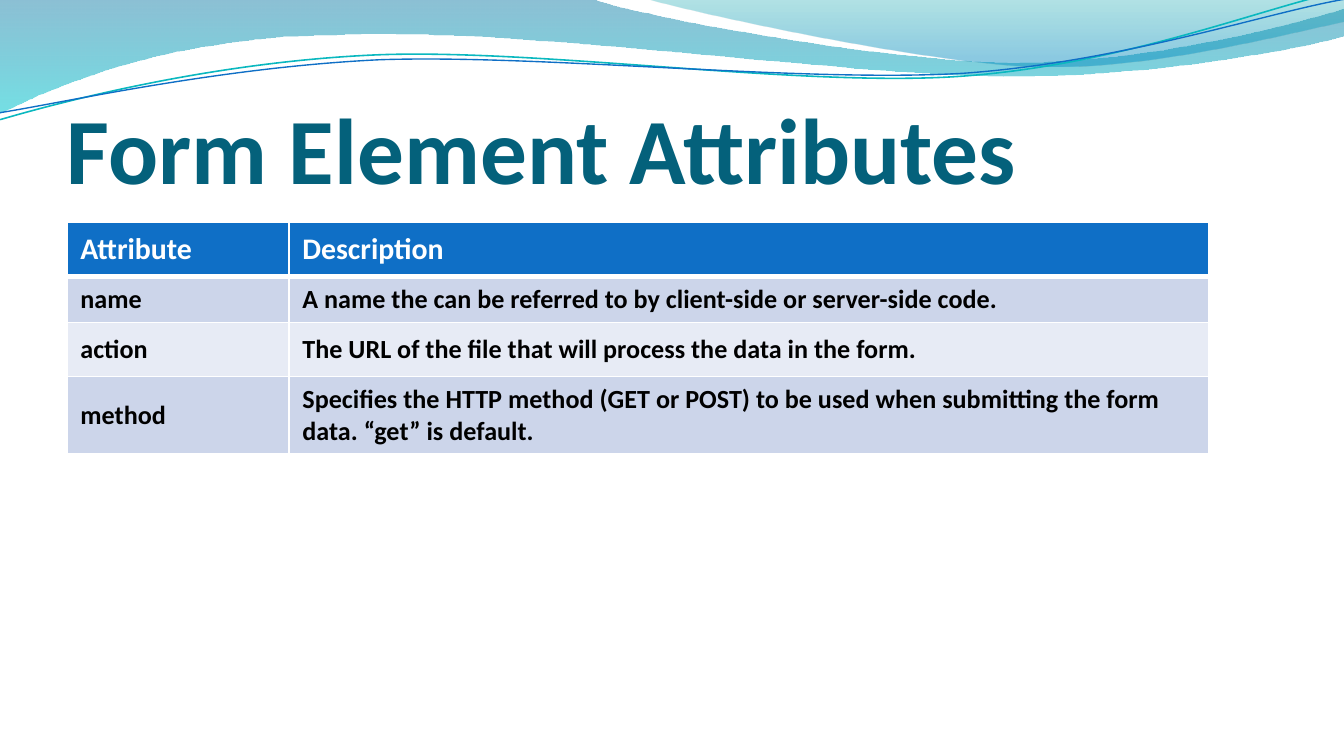
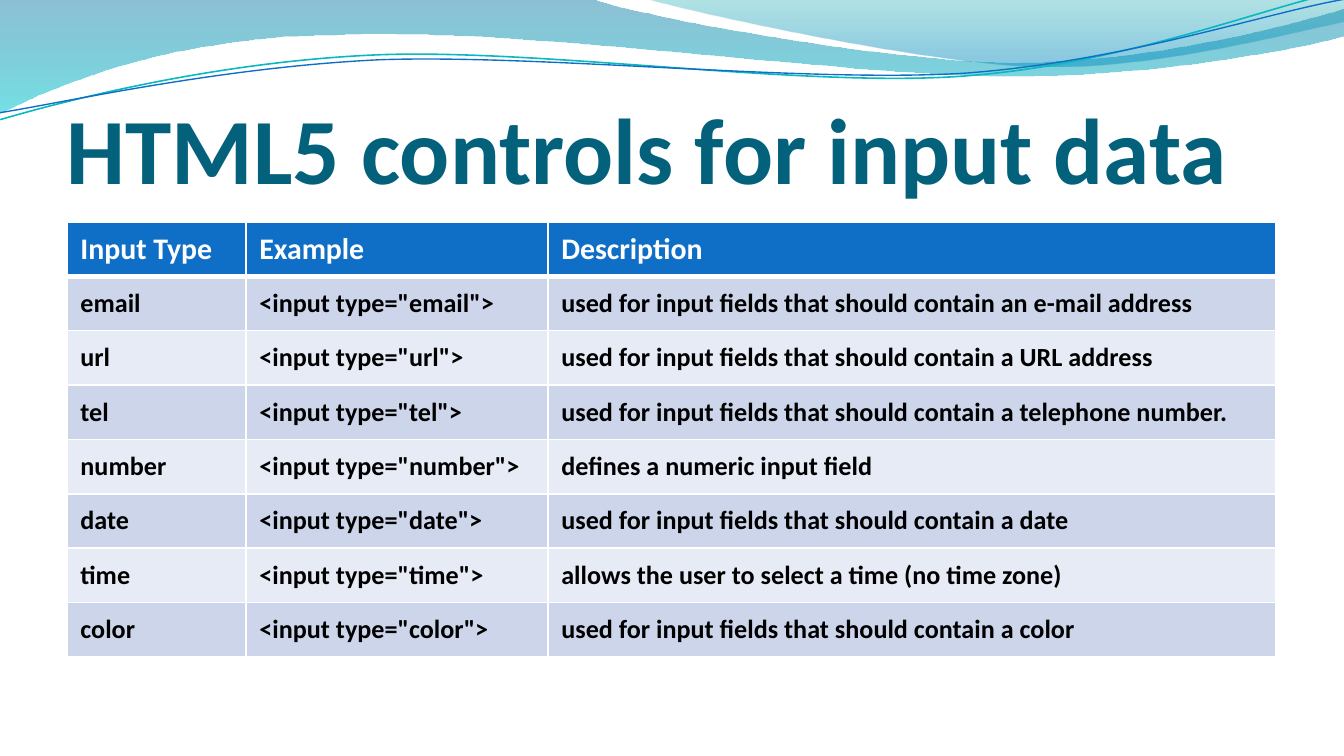
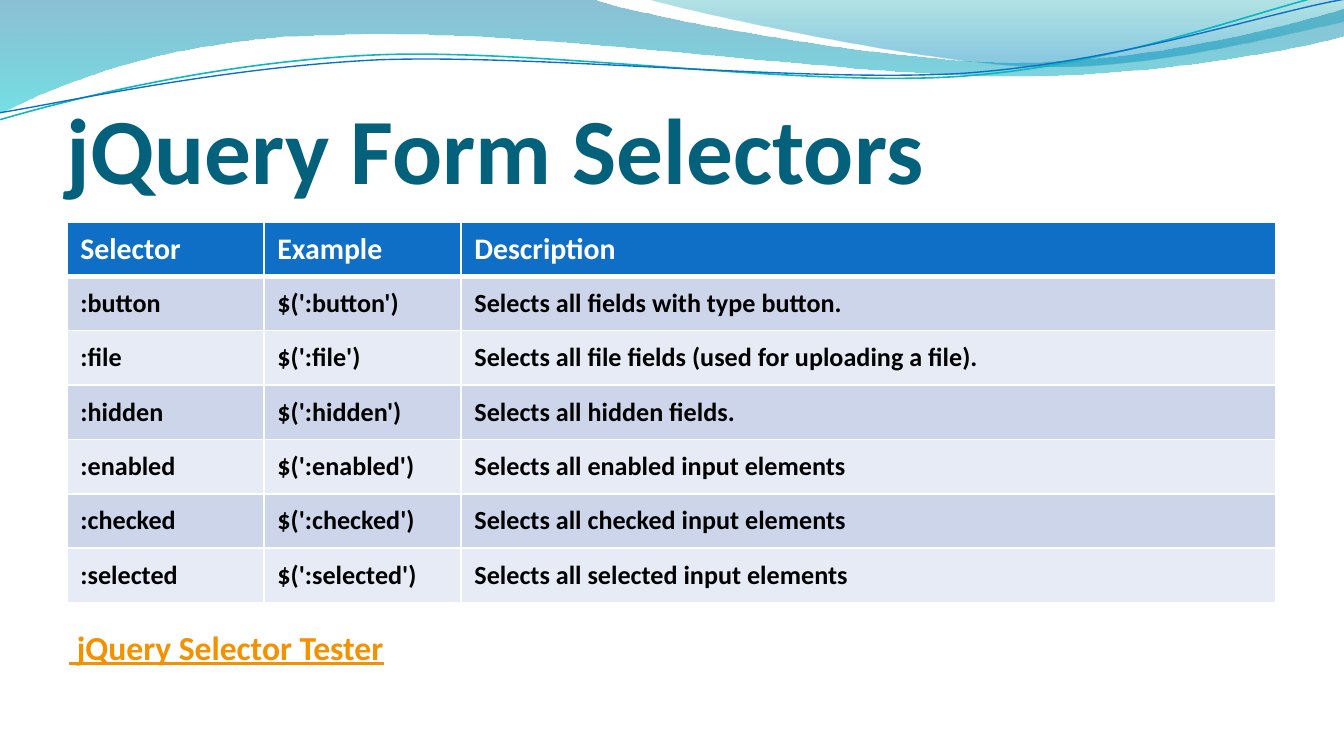
"""Build three slides on HTML forms: a shared wave band, a title and a table on each."""
from lxml.etree import SubElement
from pptx import Presentation
from pptx.dml.color import RGBColor
from pptx.enum.text import MSO_ANCHOR, MSO_AUTO_SIZE, PP_ALIGN
from pptx.oxml.ns import qn
from pptx.util import Emu, Pt

FONT = "Calibri"
COLORS = {
    "title": "04617B", "header": "0F6FC6", "odd": "CCD5EA", "even": "E7EBF5",
    "white": "FFFFFF", "black": "000000", "link": "F49100", "teal_line": "0AB8BF",
    "blue_line": "0F6FC6", "deep_blue": "0074A1", "aqua": "00C6CF",
    "sea": "00A1A9", "sky": "008BBF",
}

SLIDES = [
    {
        "title": "Form Element Attributes",
        "columns": (222, 920),
        "short_rows": (1,),
        "rows": [
            ("Attribute", "Description"),
            ("name", "A name the can be referred to by client-side or server-side code."),
            ("action", "The URL of the file that will process the data in the form."),
            ("method", "Specifies the HTTP method (GET or POST) to be used when submitting "
                       "the form data. “get” is default."),
        ],
    },
    {
        "title": "HTML5 controls for input data",
        "columns": (179, 302, 728),
        "rows": [
            ("Input Type", "Example", "Description"),
            ("email", '<input type="email">',
             "used for input fields that should contain an e-mail address"),
            ("url", '<input type="url">',
             "used for input fields that should contain a URL address"),
            ("tel", '<input type="tel">',
             "used for input fields that should contain a telephone number."),
            ("number", '<input type="number">', "defines a numeric input field"),
            ("date", '<input type="date">', "used for input fields that should contain a date"),
            ("time", '<input type="time">', "allows the user to select a time (no time zone)"),
            ("color", '<input type="color">',
             "used for input fields that should contain a color"),
        ],
    },
    {
        "title": "jQuery Form Selectors",
        "columns": (197, 197, 815),
        "rows": [
            ("Selector", "Example", "Description"),
            (":button", "$(':button')", "Selects all fields with type button."),
            (":file", "$(':file')", "Selects all file fields (used for uploading a file)."),
            (":hidden", "$(':hidden')", "Selects all hidden fields."),
            (":enabled", "$(':enabled')", "Selects all enabled input elements"),
            (":checked", "$(':checked')", "Selects all checked input elements"),
            (":selected", "$(':selected')", "Selects all selected input elements"),
        ],
        "link": " jQuery Selector Tester",
    },
]

WAVES = [
    {
        "start": (0, 0),
        "segments": [
            [(591, -1)],
            [(640, 17), (892, 63), (1019, 63)],
            [(1146, 63), (1288, 26), (1344, 9)],
            [(1345, 36)],
            [(1321, 44), (1169, 77), (1003, 77)],
            [(836, 75), (513, 28), (345, 35)],
            [(173, 36), (62, 83), (-1, 114)],
            [(0, 0)],
        ],
        "stops": [(0, "deep_blue", 45), (1, "aqua", 55)],
    },
    {
        "start": (644, -1),
        "segments": [
            [(684, 11), (917, 62), (1034, 66)],
            [(1150, 70), (1292, 32), (1344, 22)],
            [(1344, 0)],
            [(644, -1)],
        ],
        "stops": [(0, "sea", 30), (0.8, "sky", 45)],
    },
    {
        "start": (-2, 88),
        "segments": [
            [(64, 72), (212, 41), (372, 41)],
            [(533, 41), (794, 93), (956, 90)],
            [(1119, 87), (1264, 36), (1343, 23)],
        ],
        "line": ("teal_line", 0.85),
    },
    {
        "start": (-2, 81),
        "segments": [
            [(62, 74), (220, 46), (380, 46)],
            [(542, 48), (801, 89), (963, 87)],
            [(1123, 83), (1267, 41), (1346, 31)],
        ],
        "line": ("blue_line", 0.75),
    },
]

SLIDE_SIZE = (1344, 756)
TITLE_BOX = (67, 77, 1210, 126)
LINK_BOX = (56, 620, 344, 54)
TABLE_LEFT, TABLE_TOP = 67, 222
EIGHT_ROWS, SHORT_ROW = 435, 46
LINE_TILT = 357.3


def px(length):
    return Emu(round(length * 914400 / 134.4))


def color(name):
    return RGBColor.from_string(COLORS[name])


def write_text(frame, text, *, size, fill, underline=None, anchor=MSO_ANCHOR.TOP):
    frame.vertical_anchor = anchor
    para = frame.paragraphs[0]
    para.alignment = PP_ALIGN.LEFT
    span = para.add_run()
    span.text = text
    font = span.font
    font.name, font.size, font.bold, font.underline = FONT, Pt(size), True, underline
    font.color.rgb = color(fill)


def bend_curves(shape, segments):
    """Join each three-point segment of the outline into one Bezier curve."""
    corners = iter(list(shape.element.iter(qn("a:lnTo"))))
    for segment in segments:
        first, *others = [next(corners) for _ in segment]
        if others:
            first.tag = qn("a:cubicBezTo")
        for corner in others:
            first.append(corner[0])
            corner.getparent().remove(corner)


def add_wave(page, wave):
    segments = wave["segments"]
    points = [(px(x), px(y)) for segment in segments for x, y in segment]
    builder = page.shapes.build_freeform(*map(px, wave["start"]))
    builder.add_line_segments(points, close="stops" in wave)
    shape = builder.convert_to_shape()
    bend_curves(shape, segments)
    shape.shadow.inherit = False
    if "line" in wave:
        name, width = wave["line"]
        shape.rotation = LINE_TILT
        shape.fill.background()
        shape.line.color.rgb = color(name)
        shape.line.width = Pt(width)
        return shape
    shape.line.fill.background()
    shape.fill.gradient()
    shape.fill.gradient_angle = 270
    for stop, (position, name, _) in zip(shape.fill.gradient_stops, wave["stops"]):
        stop.position = position
        stop.color.rgb = color(name)
    for tint, (_, _, opacity) in zip(shape.element.iter(qn("a:srgbClr")), wave["stops"]):
        SubElement(tint, qn("a:alpha")).set("val", str(opacity * 1000))
    return shape


def add_shared_waves(page):
    """Draw the waves and move them to the layout, behind its placeholders."""
    tree = page.slide_layout.shapes.element
    for position, wave in enumerate(WAVES, start=2):
        tree.insert(position, add_wave(page, wave).element)


def set_borders(cell, top, bottom):
    properties = cell._tc.get_or_add_tcPr()
    for side, width in (("L", 1), ("R", 1), ("T", top), ("B", bottom)):
        border = SubElement(properties, qn(f"a:ln{side}"), w=str(Pt(width)))
        solid = SubElement(border, qn("a:solidFill"))
        SubElement(solid, qn("a:srgbClr"), val=COLORS["white"])


def add_grid(page, rows, columns, short_rows=()):
    band = px(EIGHT_ROWS) // 8
    frame = page.shapes.add_table(len(rows), len(columns), px(TABLE_LEFT), px(TABLE_TOP),
                                  px(sum(columns)), band * len(rows))
    table = frame.table
    for column, width in zip(table.columns, columns):
        column.width = px(width)
    for row_index, texts in enumerate(rows):
        table.rows[row_index].height = px(SHORT_ROW) if row_index in short_rows else band
        header = row_index == 0
        fill = "header" if header else "odd" if row_index % 2 else "even"
        for column_index, text in enumerate(texts):
            cell = table.cell(row_index, column_index)
            set_borders(cell, 3 if row_index == 1 else 1, 3 if header else 1)
            cell.fill.solid()
            cell.fill.fore_color.rgb = color(fill)
            write_text(cell.text_frame, text, size=16 if header else 14,
                       fill="white" if header else "black")
            cell.vertical_anchor = MSO_ANCHOR.MIDDLE


def add_title(page, text):
    title = page.shapes.title
    title.left, title.top, title.width, title.height = map(px, TITLE_BOX)
    frame = title.text_frame
    frame.auto_size = MSO_AUTO_SIZE.NONE
    frame.margin_left = frame.margin_right = frame.margin_bottom = 0
    frame.margin_top = px(7)
    write_text(frame, text, size=50, fill="title", anchor=MSO_ANCHOR.BOTTOM)


def add_link(page, text):
    frame = page.shapes.add_textbox(*map(px, LINK_BOX)).text_frame
    frame.word_wrap = False
    frame.auto_size = MSO_AUTO_SIZE.SHAPE_TO_FIT_TEXT
    write_text(frame, text, size=18, fill="link", underline=True)


def main():
    deck = Presentation()
    deck.slide_width, deck.slide_height = map(px, SLIDE_SIZE)
    layout = deck.slide_layouts[5]
    for index, content in enumerate(SLIDES):
        page = deck.slides.add_slide(layout)
        if index == 0:
            add_shared_waves(page)
        add_title(page, content["title"])
        add_grid(page, content["rows"], content["columns"], content.get("short_rows", ()))
        if "link" in content:
            add_link(page, content["link"])
    deck.save("out.pptx")


if __name__ == "__main__":
    main()
